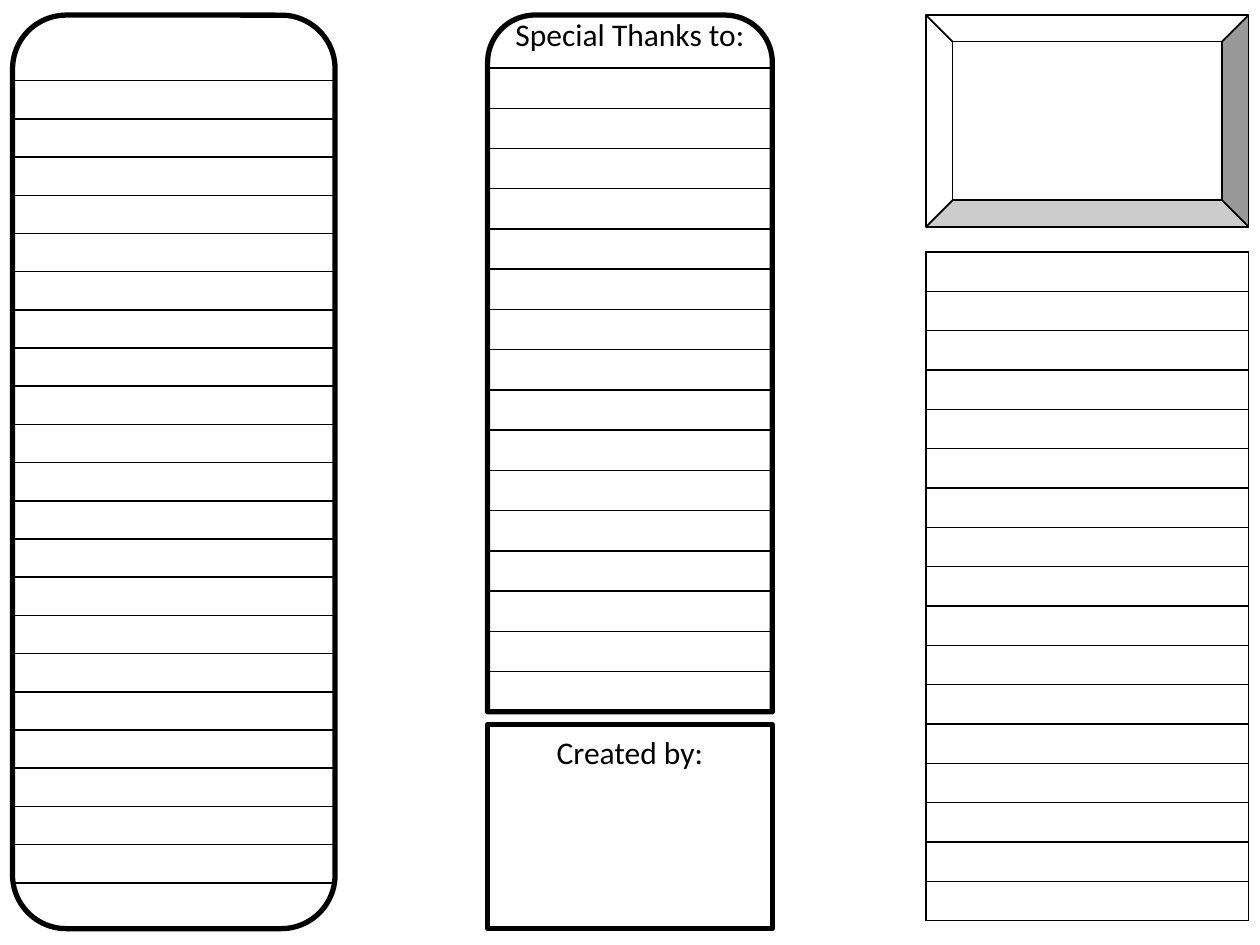
from dataclasses import dataclass

from lxml.etree import SubElement
from pptx import Presentation
from pptx.dml.color import RGBColor
from pptx.enum.shapes import MSO_SHAPE
from pptx.enum.text import MSO_ANCHOR, PP_ALIGN
from pptx.oxml.ns import qn
from pptx.slide import Slide
from pptx.util import Inches, Pt

# One grid unit is a tenth of an inch: 100 columns by 75 rows
UNIT = 0.1
COLUMNS, ROWS = 100, 75


def color(value):
    return RGBColor.from_string(value)


def grid(units):
    return Inches(units * UNIT)


@dataclass
class Brochure:
    slide: Slide
    font: str = "Calibri"
    ink: str = "000000"
    paper: str = "FFFFFF"
    text_size: int = 18
    rule_width: int = 1

    def panel(self, kind, left, top, width, height, line_width=3):
        shape = self.slide.shapes.add_shape(
            kind, grid(left), grid(top), grid(width), grid(height))
        shape.shadow.inherit = False
        shape.fill.solid()
        shape.fill.fore_color.rgb = color(self.paper)
        shape.line.color.rgb = color(self.ink)
        shape.line.width = Pt(line_width)
        return shape

    def heading(self, shape, text, top_margin):
        frame = shape.text_frame
        frame.word_wrap = True
        frame.vertical_anchor = MSO_ANCHOR.TOP
        frame.margin_left = frame.margin_right = 0
        frame.margin_top = grid(top_margin)
        paragraph = frame.paragraphs[0]
        paragraph.text = text
        paragraph.alignment = PP_ALIGN.CENTER
        paragraph.font.name = self.font
        paragraph.font.size = Pt(self.text_size)
        paragraph.font.color.rgb = color(self.ink)

    def ruled_lines(self, count, left, top, width, height):
        table = self.slide.shapes.add_table(
            count, 1, grid(left), grid(top), grid(width), grid(height)).table
        table.first_row = table.horz_banding = False
        for row in table.rows:
            row.height = grid(height / count)
            self.ruled_cell(row.cells[0])

    def ruled_cell(self, cell):
        cell.margin_top = cell.margin_bottom = 0
        # Small empty text keeps the row at its set height
        paragraph = cell.text_frame.paragraphs[0]
        SubElement(paragraph._p, qn("a:endParaRPr"), sz="1200")
        properties = cell._tc.get_or_add_tcPr()
        for side in ("a:lnL", "a:lnR", "a:lnT", "a:lnB"):
            border = SubElement(properties, qn(side), w=str(Pt(self.rule_width)))
            fill = SubElement(border, qn("a:solidFill"))
            SubElement(fill, qn("a:srgbClr"), val=self.ink)
        cell.fill.background()


def main():
    presentation = Presentation()
    presentation.slide_width = grid(COLUMNS)
    presentation.slide_height = grid(ROWS)
    brochure = Brochure(presentation.slides.add_slide(presentation.slide_layouts[6]))

    # Three brochure columns
    top, outer_width, middle_width = 1.2, 25.6, 22.6
    left, middle, right = 1, 38.7, 73.5

    # Middle: thanks and author panels
    thanks = brochure.panel(
        MSO_SHAPE.ROUND_2_SAME_RECTANGLE, middle, top, middle_width, 55.3)
    brochure.heading(thanks, "Special Thanks to:", -1.1)
    author = brochure.panel(MSO_SHAPE.RECTANGLE, middle, 57.5, middle_width, 16.2)
    brochure.heading(author, "Created by:", 0.7)

    # Right: picture frame; left: rounded note panel
    brochure.panel(MSO_SHAPE.BEVEL, right, top, outer_width, 16.8, line_width=1)
    brochure.panel(MSO_SHAPE.ROUNDED_RECTANGLE, left, top, outer_width, 72.5)

    # Writing lines in each column
    brochure.ruled_lines(17, right, 20, outer_width, 53.1)
    brochure.ruled_lines(21, left, 6.4, outer_width, 63.7)
    brochure.ruled_lines(16, middle, 5.4, middle_width, 51.1)

    presentation.save("out.pptx")


if __name__ == "__main__":
    main()
